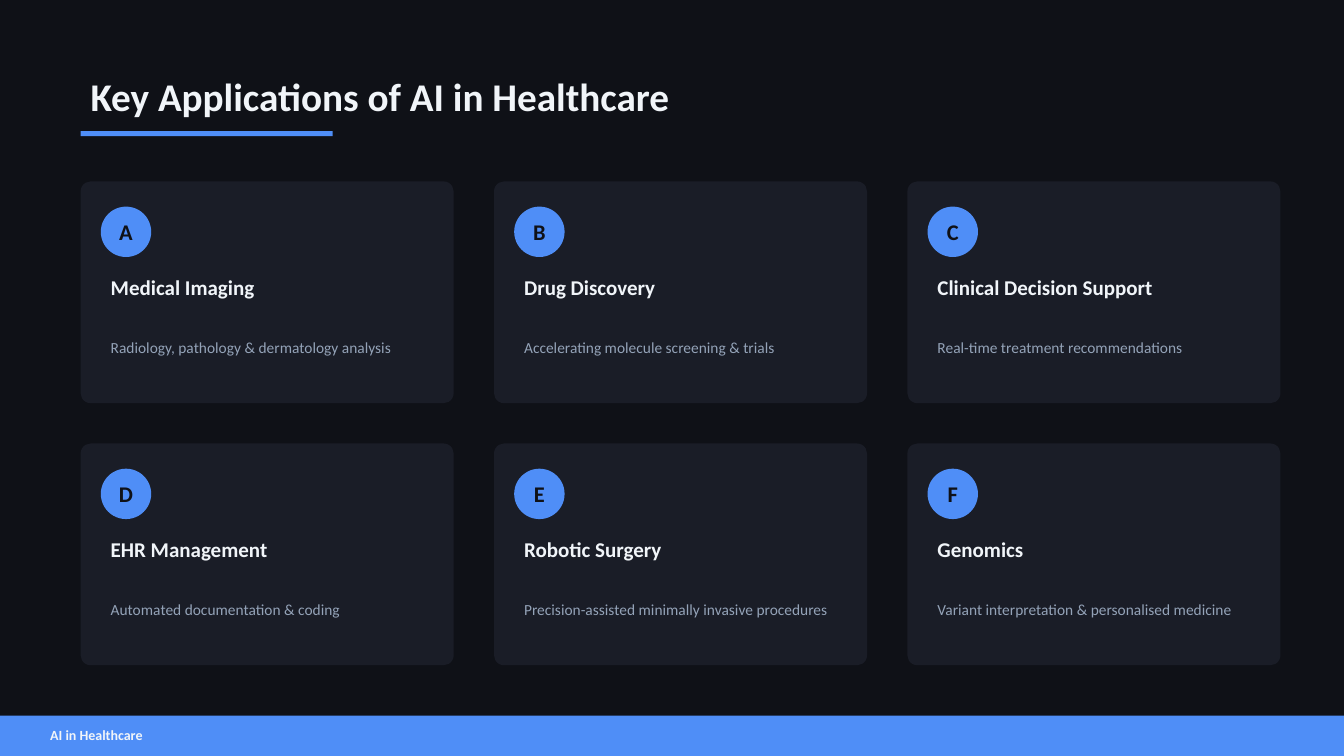
from pptx import Presentation
from pptx.dml.color import RGBColor
from pptx.enum.shapes import MSO_SHAPE as Preset
from pptx.enum.text import MSO_ANCHOR as Anchor, PP_ALIGN as Align
from pptx.util import Inches, Pt

COLORS = {
    "background": "0F1117",
    "card": "1A1D27",
    "accent": "4F8EF7",
    "light": "F1F5F9",
    "muted": "94A3B8",
}
FONT = "Calibri"
SLIDE_W, SLIDE_H = 13.33, 7.5
CARD_W, CARD_H, GAP = 3.7, 2.2, 0.4
COLUMNS = 3

APPLICATIONS = [
    ("A", "Medical Imaging", "Radiology, pathology & dermatology analysis"),
    ("B", "Drug Discovery", "Accelerating molecule screening & trials"),
    ("C", "Clinical Decision Support", "Real-time treatment recommendations"),
    ("D", "EHR Management", "Automated documentation & coding"),
    ("E", "Robotic Surgery", "Precision-assisted minimally invasive procedures"),
    ("F", "Genomics", "Variant interpretation & personalised medicine"),
]


def color(name):
    """Return the palette colour with the given name."""
    return RGBColor.from_string(COLORS[name])


def add_block(slide, preset, left, top, width, height, fill):
    """Add a flat filled shape without outline or shadow."""
    block = slide.shapes.add_shape(
        preset, Inches(left), Inches(top), Inches(width), Inches(height))
    block.shadow.inherit = False
    block.fill.solid()
    block.fill.fore_color.rgb = color(fill)
    block.line.fill.background()
    return block


def write(frame, text, size, ink, bold=True, align=Align.LEFT):
    """Write one vertically centred line into a text frame."""
    frame.word_wrap = True
    frame.vertical_anchor = Anchor.MIDDLE
    line = frame.paragraphs[0]
    line.alignment = align
    run = line.add_run()
    run.text = text
    run.font.name = FONT
    run.font.size = Pt(size)
    run.font.bold = bold
    run.font.color.rgb = color(ink)


def add_label(slide, left, top, width, height, text, size, ink, bold=True):
    """Add a text box holding one line."""
    label = slide.shapes.add_textbox(
        Inches(left), Inches(top), Inches(width), Inches(height))
    write(label.text_frame, text, size, ink, bold)


def add_heading(slide, left, top, width, height):
    """Add the slide title with its accent underline."""
    add_label(slide, left, top, width, height,
              "Key Applications of AI in Healthcare", 28, "light")
    add_block(slide, Preset.RECTANGLE, left, top + height - 0.1, 2.5, 0.05, "accent")


def add_card(slide, left, top, width, height, letter, name, summary):
    """Add one application card with badge, name and summary."""
    card = add_block(slide, Preset.ROUNDED_RECTANGLE, left, top, width, height, "card")
    card.adjustments[0] = 0.045
    inner_left, inner_width = left + 0.2, width - 0.4
    badge = add_block(slide, Preset.OVAL, inner_left, top + 0.25, 0.5, 0.5, "accent")
    frame = badge.text_frame
    frame.margin_left = frame.margin_right = frame.margin_top = frame.margin_bottom = 0
    write(frame, letter, 16, "background", align=Align.CENTER)
    add_label(slide, inner_left, top + 0.85, inner_width, 0.4, name, 15, "light")
    add_label(slide, inner_left, top + 1.3, inner_width, 0.7, summary, 11, "muted", False)


def add_card_grid(slide, left, top):
    """Lay the application cards out row by row."""
    for index, application in enumerate(APPLICATIONS):
        row, column = divmod(index, COLUMNS)
        add_card(slide, left + column * (CARD_W + GAP), top + row * (CARD_H + GAP),
                 CARD_W, CARD_H, *application)


def add_footer(slide, left, top, width, height):
    """Add the footer band with the deck name."""
    add_block(slide, Preset.RECTANGLE, left, top, width, height, "accent")
    add_label(slide, left + 0.4, top + 0.02, 6, 0.35, "AI in Healthcare", 10, "light")


def main():
    """Build the slide and save it."""
    deck = Presentation()
    deck.slide_width, deck.slide_height = Inches(SLIDE_W), Inches(SLIDE_H)
    slide = deck.slides.add_slide(deck.slide_layouts[6])
    slide.background.fill.solid()
    slide.background.fill.fore_color.rgb = color("background")
    add_heading(slide, 0.8, 0.5, 10, 0.9)
    add_card_grid(slide, 0.8, 1.8)
    add_footer(slide, 0, SLIDE_H - 0.4, SLIDE_W, 0.4)
    deck.save("out.pptx")


if __name__ == "__main__":
    main()
